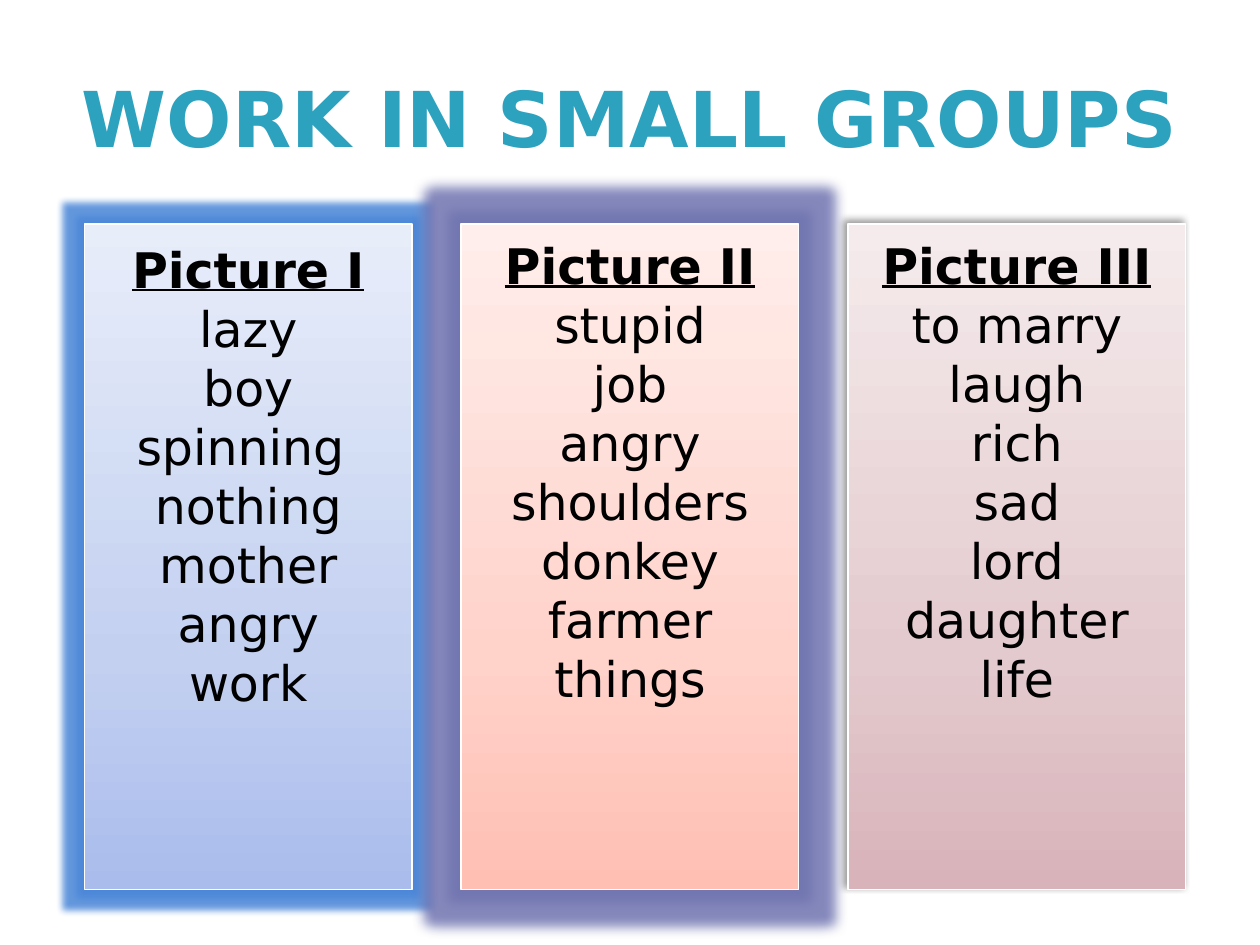
import copy

import lxml.etree
import pptx
import pptx.dml.color
import pptx.enum.shapes
import pptx.enum.text
import pptx.oxml.ns
import pptx.util

WIDTH, HEIGHT = 10, 7.5


def color(value):
    return pptx.dml.color.RGBColor.from_string(value)


class WordSlide:
    """Holds the text style and the current slide, and adds its elements."""

    font = "DejaVu Sans"
    size = 28
    leading = 33.7

    def __init__(self, prs):
        self.s = prs.slides.add_slide(prs.slide_layouts[6])

    def box(self, x, y, w, h):
        return [pptx.util.Inches(v) for v in (x * WIDTH, y * HEIGHT, w * WIDTH, h * HEIGHT)]

    def paragraph(self, p, text, size, fill, bold=False, underline=False):
        p.text = text
        p.alignment = pptx.enum.text.PP_ALIGN.CENTER
        p.font.name = self.font
        p.font.size = pptx.util.Pt(size)
        p.font.bold = bold
        p.font.underline = underline
        p.font.color.rgb = color(fill)

    def title(self, text, *place):
        tf = self.s.shapes.add_textbox(*self.box(*place)).text_frame
        tf.word_wrap = True
        tf.vertical_anchor = pptx.enum.text.MSO_ANCHOR.MIDDLE
        self.paragraph(tf.paragraphs[0], text, 44, "2DA2BF", bold=True)

    def gradient(self, sp, colors):
        sp.fill.gradient()
        sp.fill.gradient_angle = 90
        stops = sp._element.spPr.find(".//" + pptx.oxml.ns.qn("a:gsLst"))
        stops.append(copy.deepcopy(stops[0]))
        for stop, position, value in zip(sp.fill.gradient_stops, (0, 0.35, 1), colors):
            stop.position = position
            stop.color.rgb = color(value)

    def effect(self, sp, kind, value, alpha, **attributes):
        qn = pptx.oxml.ns.qn
        sp.shadow.inherit = False
        effects = sp._element.spPr.find(qn("a:effectLst"))
        node = lxml.etree.SubElement(effects, qn("a:" + kind))
        for name, amount in attributes.items():
            node.set(name, str(amount))
        tint = lxml.etree.SubElement(node, qn("a:srgbClr"), val=value)
        lxml.etree.SubElement(tint, qn("a:alpha"), val=str(alpha * 1000))

    def card(self, place, colors, heading, words, inset):
        sp = self.s.shapes.add_shape(pptx.enum.shapes.MSO_SHAPE.RECTANGLE, *self.box(*place))
        self.gradient(sp, colors)
        sp.line.color.rgb = color("FFFFFF")
        sp.line.width = pptx.util.Pt(0.75)
        tf = sp.text_frame
        tf.word_wrap = True
        tf.vertical_anchor = pptx.enum.text.MSO_ANCHOR.TOP
        tf.margin_top = pptx.util.Inches(inset)
        for i, text in enumerate([heading] + words):
            p = tf.add_paragraph() if i else tf.paragraphs[0]
            self.paragraph(p, text, self.size, "000000", bold=i == 0, underline=i == 0)
            p.line_spacing = pptx.util.Pt(self.leading)
        return sp


def main():
    prs = pptx.Presentation()
    prs.slide_width = pptx.util.Inches(WIDTH)
    prs.slide_height = pptx.util.Inches(HEIGHT)
    slide = WordSlide(prs)
    pt = pptx.util.Pt
    cards = [
        (0.067, 0.26, ("A9BCEC", "C3D0F0", "E8EDFA"), "Picture I",
         ["lazy", "boy", "spinning ", "nothing", "mother", "angry", "work"], 0.12,
         ("glow", "4A86D8", 85), {"rad": pt(8)}),
        (0.366, 0.268, ("FFBFB3", "FFD2CA", "FFEEEB"), "Picture II",
         ["stupid", "job", "angry", "shoulders", "donkey", "farmer", "things"], 0.09,
         ("glow", "7074B0", 85), {"rad": pt(14)}),
        (0.673, 0.268, ("D8B3B9", "E3CACE", "F5EBEC"), "Picture III",
         ["to marry", "laugh", "rich", "sad", "lord", "daughter", "life"], 0.09,
         ("outerShdw", "000000", 40), {"blurRad": pt(4), "dist": pt(3), "dir": 225 * 60000}),
    ]
    for x, w, colors, heading, words, inset, effect, attributes in cards:
        sp = slide.card((x, 0.237, w, 0.704), colors, heading, words, inset)
        slide.effect(sp, *effect, **attributes)
    slide.title("WORK IN SMALL GROUPS", 0.05, 0.04, 0.9, 0.167)
    prs.save("out.pptx")


if __name__ == "__main__":
    main()
